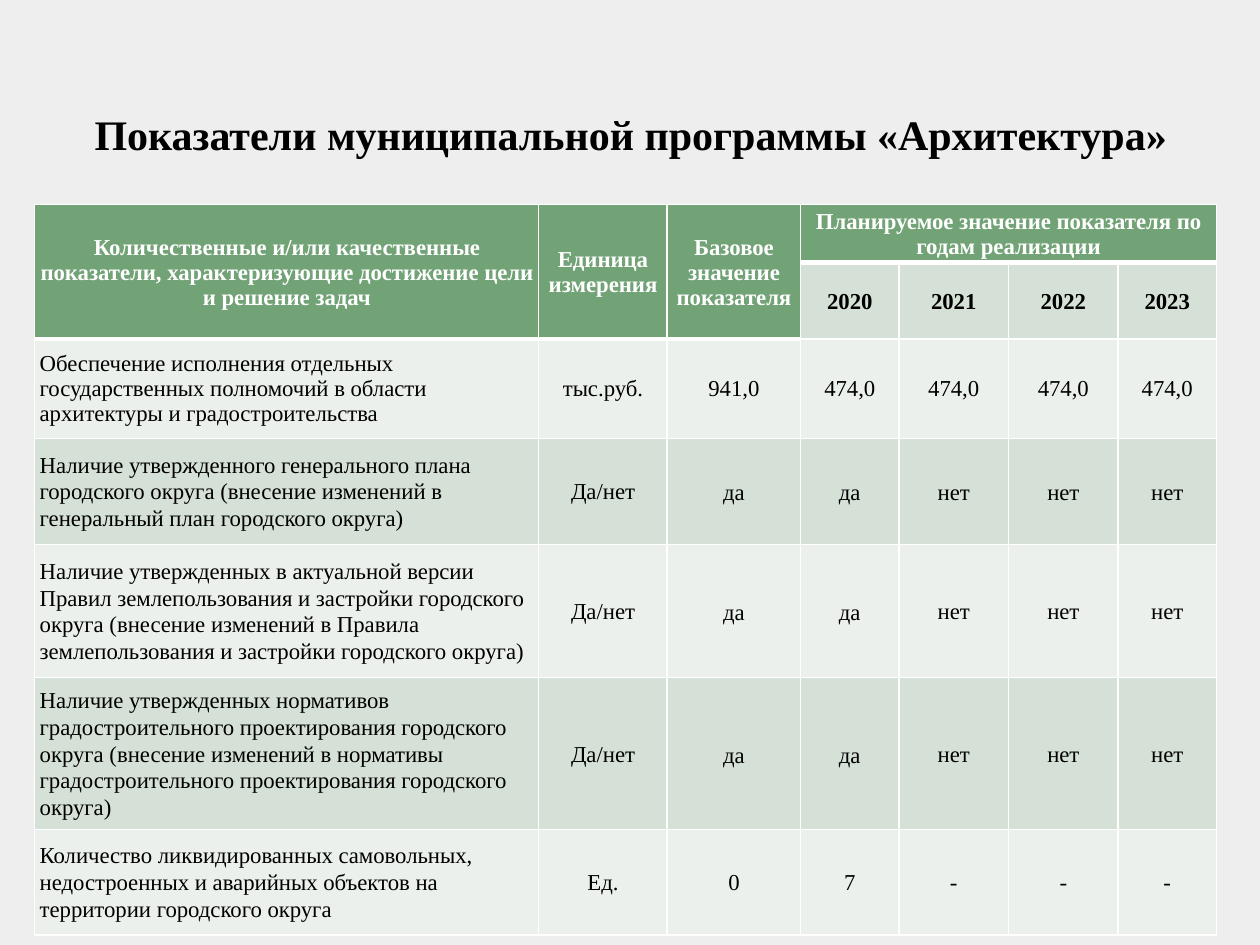
"""Build a slide with the indicators of a municipal architecture programme."""
from dataclasses import dataclass
from typing import Any

from lxml import etree
from pptx import Presentation
from pptx import util as u
from pptx.dml.color import RGBColor
from pptx.enum import text
from pptx.oxml.ns import qn

BACKGROUND = RGBColor(0xEE, 0xEE, 0xEE)
GREEN = RGBColor(0x72, 0xA3, 0x76)
DARK_BAND = RGBColor(0xD5, 0xE0, 0xD6)
LIGHT_BAND = RGBColor(0xEB, 0xF0, 0xEC)
WHITE = RGBColor(0xFF, 0xFF, 0xFF)
BLACK = RGBColor(0, 0, 0)

FONT = "Times New Roman"
CENTER, LEFT = text.PP_ALIGN.CENTER, text.PP_ALIGN.LEFT
COLUMNS = (10.16, 2.59, 2.69, 1.98, 2.21, 2.21, 1.98)
ROWS = (1.17, 1.53, 2.01, 2.13, 2.69, 3.05, 2.13)
YEARS = ("2020", "2021", "2022", "2023")
HEADINGS = (
    "Количественные и/или качественные показатели, характеризующие достижение цели и решение задач",
    "Единица измерения",
    "Базовое значение показателя",
)
PLAN_HEADING = "Планируемое значение показателя по годам реализации"

PLAIN = {"space_after": u.Pt(0)}
TIGHT = {"line_spacing": 1.07, "space_after": u.Pt(8)}
LOOSE = {"line_spacing": 1.15, "space_after": u.Pt(10)}
HEADING_MARGINS = {
    "margin_left": u.Cm(0.03), "margin_top": u.Cm(0.03),
    "margin_right": u.Cm(0.03), "margin_bottom": u.Cm(0),
}
BODY_MARGINS = {
    "margin_left": u.Cm(0.1), "margin_top": u.Cm(0.18),
    "margin_right": u.Cm(0.1), "margin_bottom": u.Cm(0.18),
}


@dataclass(frozen=True)
class Indicator:
    name: str
    unit: str
    values: tuple[str, ...]
    label_format: dict[str, Any]
    start_format: dict[str, Any]
    plan_format: dict[str, Any]


INDICATORS = (
    Indicator("Обеспечение исполнения отдельных государственных полномочий в области "
              "архитектуры и градостроительства",
              "тыс.руб.", ("941,0",) + ("474,0",) * 4, PLAIN, PLAIN, PLAIN),
    Indicator("Наличие утвержденного генерального плана городского округа "
              "(внесение изменений в генеральный план городского округа)",
              "Да/нет", ("да",) * 2 + ("нет",) * 3, TIGHT, LOOSE, LOOSE),
    Indicator("Наличие утвержденных в актуальной версии Правил землепользования и застройки "
              "городского округа (внесение изменений в Правила землепользования и застройки "
              "городского округа)",
              "Да/нет", ("да",) * 2 + ("нет",) * 3, TIGHT, LOOSE, TIGHT),
    Indicator("Наличие утвержденных нормативов градостроительного проектирования городского "
              "округа (внесение изменений в нормативы градостроительного проектирования "
              "городского округа)",
              "Да/нет", ("да",) * 2 + ("нет",) * 3, TIGHT, LOOSE, TIGHT),
    Indicator("Количество ликвидированных самовольных, недостроенных и аварийных объектов "
              "на территории городского округа",
              "Ед.", ("0", "7") + ("-",) * 3, TIGHT, TIGHT, TIGHT),
)


def apply(target: Any, values: dict[str, Any]) -> None:
    for name, value in values.items():
        setattr(target, name, value)


def write(para: Any, words: str, size: float, color: RGBColor, bold: bool) -> None:
    span = para.add_run()
    span.text = words
    apply(span.font, {"name": FONT, "size": u.Pt(size), "bold": bold})
    span.font.color.rgb = color


def paint_cell(cell: Any, fill: RGBColor, bottom: float = 1) -> None:
    properties = cell._tc.get_or_add_tcPr()
    for side, width in (("L", 1), ("R", 1), ("T", 1), ("B", bottom)):
        line = etree.SubElement(properties, qn(f"a:ln{side}"), w=str(u.Pt(width)))
        paint = etree.SubElement(line, qn("a:solidFill"))
        etree.SubElement(paint, qn("a:srgbClr"), val=str(WHITE))
    cell.fill.solid()
    cell.fill.fore_color.rgb = fill


def fill_cell(cell: Any, words: str, margins: dict[str, Any], para_format: dict[str, Any],
              color: RGBColor = BLACK, bold: bool = False, align: Any = CENTER) -> None:
    apply(cell, {**margins, "vertical_anchor": text.MSO_ANCHOR.MIDDLE})
    para = cell.text_frame.paragraphs[0]
    apply(para, {**para_format, "alignment": align})
    write(para, words, 13, color, bold)


def draw_headings(table: Any) -> None:
    for column in range(len(COLUMNS)):
        paint_cell(table.cell(0, column), GREEN, 3)
        merged = column < len(HEADINGS)
        paint_cell(table.cell(1, column), GREEN if merged else DARK_BAND, 3 if merged else 1)
    for column, words in enumerate(HEADINGS + (PLAN_HEADING,)):
        fill_cell(table.cell(0, column), words, HEADING_MARGINS, PLAIN, WHITE, True)
    for column in range(len(HEADINGS)):
        table.cell(0, column).merge(table.cell(1, column))
    table.cell(0, len(HEADINGS)).merge(table.cell(0, len(COLUMNS) - 1))
    for column, year in enumerate(YEARS, len(HEADINGS)):
        fill_cell(table.cell(1, column), year, HEADING_MARGINS, PLAIN, BLACK, True)


def draw_indicator(table: Any, row: int, indicator: Indicator) -> None:
    formats = ([indicator.label_format] * 2 + [indicator.start_format] * 2
               + [indicator.plan_format] * 3)
    entries = (indicator.name, indicator.unit, *indicator.values)
    for column, (words, para_format) in enumerate(zip(entries, formats)):
        cell = table.cell(row, column)
        paint_cell(cell, DARK_BAND if row % 2 else LIGHT_BAND)
        fill_cell(cell, words, BODY_MARGINS, para_format, align=CENTER if column else LEFT)


def draw_table(page: Any) -> Any:
    frame = page.shapes.add_table(len(ROWS), len(COLUMNS), u.Cm(0.7), u.Cm(4.12),
                                  u.Cm(sum(COLUMNS)), u.Cm(sum(ROWS)))
    table = frame.table
    apply(table, {"first_row": False, "horz_banding": False})
    for column, width in zip(table.columns, COLUMNS):
        column.width = u.Cm(width)
    for row, height in zip(table.rows, ROWS):
        row.height = u.Cm(height)
    draw_headings(table)
    for number, indicator in enumerate(INDICATORS, 2):
        draw_indicator(table, number, indicator)
    return frame


def draw_title(page: Any) -> Any:
    title = page.shapes.title
    apply(title, {"left": u.Cm(1.3), "top": u.Cm(1.93),
                  "width": u.Cm(22.83), "height": u.Cm(1.4)})
    apply(title.text_frame, {"word_wrap": True, "vertical_anchor": text.MSO_ANCHOR.BOTTOM,
                             "auto_size": text.MSO_AUTO_SIZE.NONE})
    para = title.text_frame.paragraphs[0]
    para.alignment = CENTER
    write(para, "Показатели муниципальной программы «Архитектура»", 24, BLACK, True)
    return title


def main() -> None:
    deck = Presentation()
    apply(deck, {"slide_width": u.Cm(25.4), "slide_height": u.Cm(19.05)})
    page = deck.slides.add_slide(deck.slide_layouts[5])
    page.background.fill.solid()
    page.background.fill.fore_color.rgb = BACKGROUND
    title = draw_title(page)
    frame = draw_table(page)
    frame.element.addnext(title.element)
    deck.save("out.pptx")


if __name__ == "__main__":
    main()
